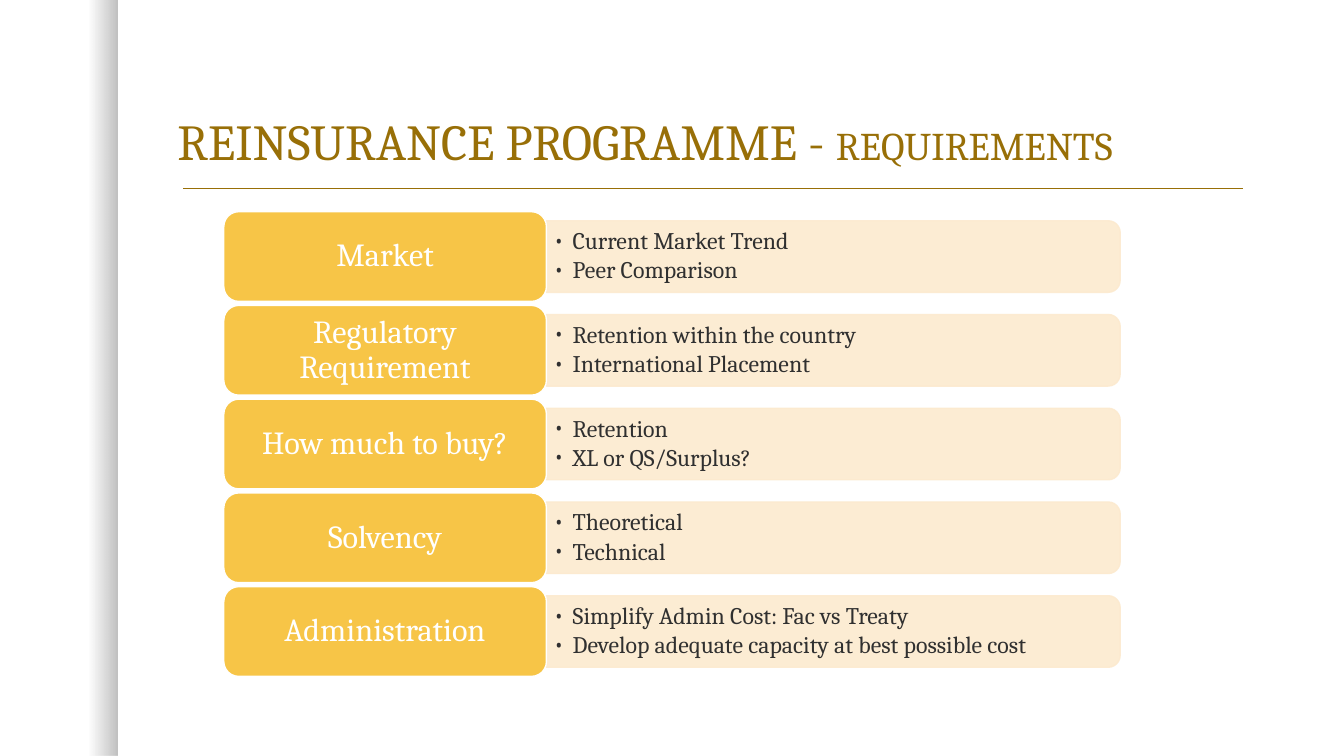
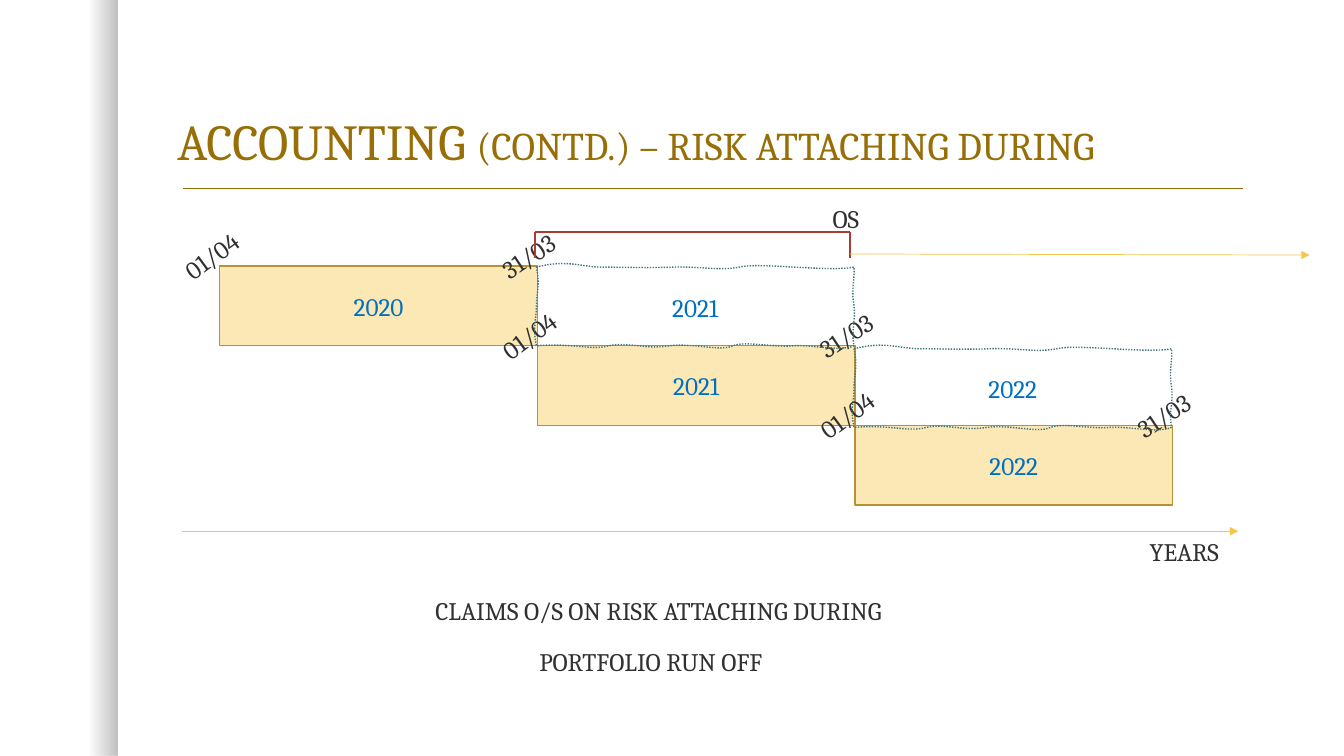
from typing import NamedTuple

from lxml import etree
from pptx import Presentation
from pptx.dml.color import RGBColor
from pptx.enum import dml, shapes, text
from pptx.oxml import ns
from pptx.util import Inches, Pt

COLOURS = {
    "title": "986F07",
    "ink": "303030",
    "white": "FFFFFF",
    "black": "000000",
    "gold": "F7C547",
    "cream": "FCEACF",
    "sand": "FCE8B5",
    "sand_edge": "B79235",
    "blue": "0070C0",
    "teal": "42757A",
    "red": "AB3C33",
}
FONT = "Cambria"
SHAPE = shapes.MSO_SHAPE
CENTER = text.PP_ALIGN.CENTER
MIDDLE = text.MSO_ANCHOR.MIDDLE


class Span(NamedTuple):
    text: str
    size: float


class Requirement(NamedTuple):
    label: str
    details: list[str]


REQUIREMENTS = [
    Requirement("Market", ["Current Market Trend", "Peer Comparison"]),
    Requirement("Regulatory Requirement",
                ["Retention within the country", "International Placement"]),
    Requirement("How much to buy?", ["Retention", "XL or QS/Surplus?"]),
    Requirement("Solvency", ["Theoretical", "Technical"]),
    Requirement("Administration",
                ["Simplify Admin Cost: Fac vs Treaty",
                 "Develop adequate capacity at best possible cost"]),
]
YEARS = ["2020", "2021", "2022"]
PERIOD_LEFT, PERIOD_TOP = 2.18, 2.64
PERIOD_WIDTH, PERIOD_HEIGHT = 3.15, 0.79

# Cubic curves around a period: two control points and an end, in inches.
WAVY_CURVES = [
    ((0.31, -0.08), (0.44, 0), (0.66, 0)),
    ((0.88, 0), (1.09, 0.01), (1.35, 0)),
    ((1.62, -0.01), (1.81, 0.04), (2.01, 0)),
    ((2.21, -0.05), (2.91, 0.05), (3.15, 0)),
    ((3.16, 0.11), (3.12, 0.24), (3.15, 0.38)),
    ((3.17, 0.53), (3.12, 0.61), (3.15, 0.78)),
    ((3.01, 0.84), (2.75, 0.77), (2.55, 0.78)),
    ((2.35, 0.8), (2.08, 0.73), (1.95, 0.78)),
    ((1.83, 0.84), (1.55, 0.75), (1.32, 0.78)),
    ((1.09, 0.82), (0.91, 0.74), (0.72, 0.78)),
    ((0.54, 0.83), (0.36, 0.75), (0, 0.78)),
    ((-0.04, 0.59), (0, 0.53), (0, 0.39)),
    ((0, 0.26), (0.04, 0.18), (0, 0)),
]


def rgb(name: str) -> RGBColor:
    return RGBColor.from_string(COLOURS[name])


def add_xml(parent, tag: str, **attributes: str):
    return etree.SubElement(parent, ns.qn(tag), attributes)


def set_opacity(element, percent: int) -> None:
    for colour in element.iter(ns.qn("a:srgbClr")):
        add_xml(colour, "a:alpha", val=str(percent * 1000))


def add_bullet(para) -> None:
    para.level = 1
    properties = para._p.get_or_add_pPr()
    properties.set("marL", str(Inches(0.19)))
    properties.set("indent", str(-Inches(0.19)))
    add_xml(properties, "a:buFont", typeface=FONT)
    add_xml(properties, "a:buChar", char="•")


def write(shape, paragraphs: list[list[Span]], *, colour="ink", align=None,
          anchor=text.MSO_ANCHOR.TOP, insets=(0.1, 0.05), spacing=None,
          after=None, bullet=False, grow=False) -> None:
    """Fill a shape with paragraphs, each a list of spans."""
    frame = shape.text_frame
    frame.word_wrap = True
    frame.vertical_anchor = anchor
    frame.margin_left = frame.margin_right = Inches(insets[0])
    frame.margin_top = frame.margin_bottom = Inches(insets[1])
    if grow:
        frame.auto_size = text.MSO_AUTO_SIZE.SHAPE_TO_FIT_TEXT
    for index, spans in enumerate(paragraphs):
        para = frame.add_paragraph() if index else frame.paragraphs[0]
        if bullet:
            add_bullet(para)
        para.alignment = align
        para.line_spacing = spacing
        para.space_after = after
        para.font.name = FONT
        para.font.size = Pt(spans[0].size)
        for item in spans:
            span = para.add_run()
            span.text = item.text
            span.font.name = FONT
            span.font.size = Pt(item.size)
            span.font.color.rgb = rgb(colour)


def add_text(page, left: float, top: float, width: float, height: float,
             paragraphs: list[list[Span]], *, rotation=0.0, **style) -> None:
    box = page.shapes.add_textbox(Inches(left), Inches(top), Inches(width), Inches(height))
    box.rotation = rotation
    write(box, paragraphs, **style)


def add_note(page, left: float, top: float, width: float, words: str, **style) -> None:
    add_text(page, left, top, width, 0.4, [[Span(words, 18)]], grow=True, **style)


def paint(shape, *, fill: str | None, line: str | None) -> None:
    shape.shadow.inherit = False
    if fill:
        shape.fill.solid()
        shape.fill.fore_color.rgb = rgb(fill)
    else:
        shape.fill.background()
    if line:
        shape.line.color.rgb = rgb(line)
        shape.line.width = Pt(1)
    else:
        shape.line.fill.background()


def add_box(page, kind, left: float, top: float, width: float, height: float,
            *, fill: str | None = None, line: str | None = None):
    box = page.shapes.add_shape(kind, Inches(left), Inches(top), Inches(width), Inches(height))
    paint(box, fill=fill, line=line)
    return box


def add_line(page, start: tuple[float, float], end: tuple[float, float],
             colour: str, width: float, arrow: bool = False) -> None:
    line = page.shapes.add_connector(
        shapes.MSO_CONNECTOR.STRAIGHT, *map(Inches, start), *map(Inches, end))
    line.line.color.rgb = rgb(colour)
    line.line.width = Pt(width)
    if arrow:
        add_xml(line.line._get_or_add_ln(), "a:tailEnd", type="triangle")
    add_xml(line._element.spPr, "a:effectLst")


def add_page(deck, title: list[Span]):
    """Add a page with the shaded left band, title and rule."""
    page = deck.slides.add_slide(deck.slide_layouts[6])
    band = add_box(page, SHAPE.RECTANGLE, 0, 0, 1.17, 7.5)
    band.fill.gradient()
    band.fill.gradient_angle = 0
    for stop, position, opacity in zip(band.fill.gradient_stops, (0.75, 1), (0, 25)):
        stop.position = position
        stop.color.rgb = rgb("black")
        set_opacity(stop._gs, opacity)
    add_line(page, (1.82, 1.87), (12.33, 1.87), "title", 1)
    add_text(page, 1.66, 0.42, 10.75, 1.33, [title], colour="title",
             anchor=text.MSO_ANCHOR.BOTTOM, spacing=0.9)
    return page


def add_requirement(page, top: float, item: Requirement) -> None:
    label_left, label_width, label_height = 2.22, 3.2, 0.89
    length, depth = 5.69, 0.71
    detail_left = label_left + label_width
    middle = top + label_height / 2
    # The panel is turned a quarter, so its frame is placed by its centre.
    panel = add_box(page, SHAPE.ROUND_2_SAME_RECTANGLE,
                    detail_left + (length - depth) / 2, middle - length / 2,
                    depth, length, fill="cream", line="cream")
    panel.rotation = 90
    set_opacity(panel._element.spPr, 90)
    add_text(page, detail_left, middle - 0.32, 5.65, 0.64,
             [[Span(detail, 17)] for detail in item.details], anchor=MIDDLE,
             insets=(0.07, 0.04), spacing=0.9, after=Pt(2.55), bullet=True)
    label = add_box(page, SHAPE.ROUNDED_RECTANGLE, label_left, top,
                    label_width, label_height, fill="gold", line="white")
    write(label, [[Span(item.label, 23)]], colour="white", align=CENTER,
          anchor=MIDDLE, insets=(0.14, 0.09), spacing=0.9)


def add_wavy_box(page, left: float, top: float):
    """Add a period-sized freeform and bend its sides into the wavy curves."""
    right, bottom = left + PERIOD_WIDTH, top + PERIOD_HEIGHT
    corners = [(right, top), (right, bottom), (left, bottom)]
    builder = page.shapes.build_freeform(Inches(left), Inches(top))
    builder.add_line_segments([(Inches(x), Inches(y)) for x, y in corners])
    box = builder.convert_to_shape()
    outline = next(box._element.iter(ns.qn("a:path")))
    for side in outline.findall(ns.qn("a:lnTo")):
        outline.remove(side)
    close = outline.find(ns.qn("a:close"))
    for curve in WAVY_CURVES:
        bend = add_xml(outline, "a:cubicBezTo")
        for x, y in curve:
            add_xml(bend, "a:pt", x=str(Inches(x)), y=str(Inches(y)))
    outline.append(close)
    paint(box, fill=None, line="teal")
    box.line.dash_style = dml.MSO_LINE.ROUND_DOT
    return box


def write_year(shape, year: str) -> None:
    write(shape, [[Span(year, 18)]], colour="blue", align=CENTER, anchor=MIDDLE)


def add_requirements_page(deck) -> None:
    page = add_page(deck, [Span("REINSURANCE PROGRAMME - ", 36), Span("REQUIREMENTS", 28)])
    for index, item in enumerate(REQUIREMENTS):
        add_requirement(page, 2.1 + index * 0.93, item)


def add_accounting_page(deck) -> None:
    page = add_page(deck, [Span("ACCOUNTING ", 36),
                           Span("(CONTD.) – RISK ATTACHING DURING", 28)])
    add_line(page, (1.81, 5.27), (12.28, 5.27), "gold", 0.5, arrow=True)
    add_note(page, 9.42, 5.27, 4.65, "YEARS", align=CENTER)

    corners = [(PERIOD_LEFT + index * PERIOD_WIDTH, PERIOD_TOP + index * PERIOD_HEIGHT)
               for index in range(len(YEARS))]
    for (left, top), year in zip(corners, YEARS):
        box = add_box(page, SHAPE.RECTANGLE, left, top, PERIOD_WIDTH, PERIOD_HEIGHT,
                      fill="sand", line="sand_edge")
        write_year(box, year)
    for left, top in corners:
        add_note(page, left - 0.5, top - 0.37, 1.02, "01/04", rotation=323.5)
    for left, top in corners:
        add_note(page, left + 2.66, top - 0.35, 0.95, "31/03", rotation=326.6)
    for index, year in enumerate(YEARS[1:]):
        wavy_box = add_wavy_box(page, 5.32 + index * PERIOD_WIDTH, 2.65 + index * 0.81)
        write_year(wavy_box, year)

    bracket = [(5.31, 2.56), (5.31, 2.3), (8.43, 2.3), (8.43, 2.56)]
    for start, end in zip(bracket, bracket[1:]):
        add_line(page, start, end, "red", 1.5)
    add_note(page, 4.22, 5.86, 5.2, "CLAIMS O/S ON RISK ATTACHING DURING")
    add_line(page, (8.43, 2.52), (12.99, 2.53), "gold", 0.5, arrow=True)
    add_note(page, 5.25, 6.36, 2.68, "PORTFOLIO RUN OFF")
    add_note(page, 8.16, 1.97, 0.63, "OS")


def main() -> None:
    deck = Presentation()
    deck.slide_width, deck.slide_height = Inches(13.33), Inches(7.5)
    add_requirements_page(deck)
    add_accounting_page(deck)
    deck.save("out.pptx")


if __name__ == "__main__":
    main()
